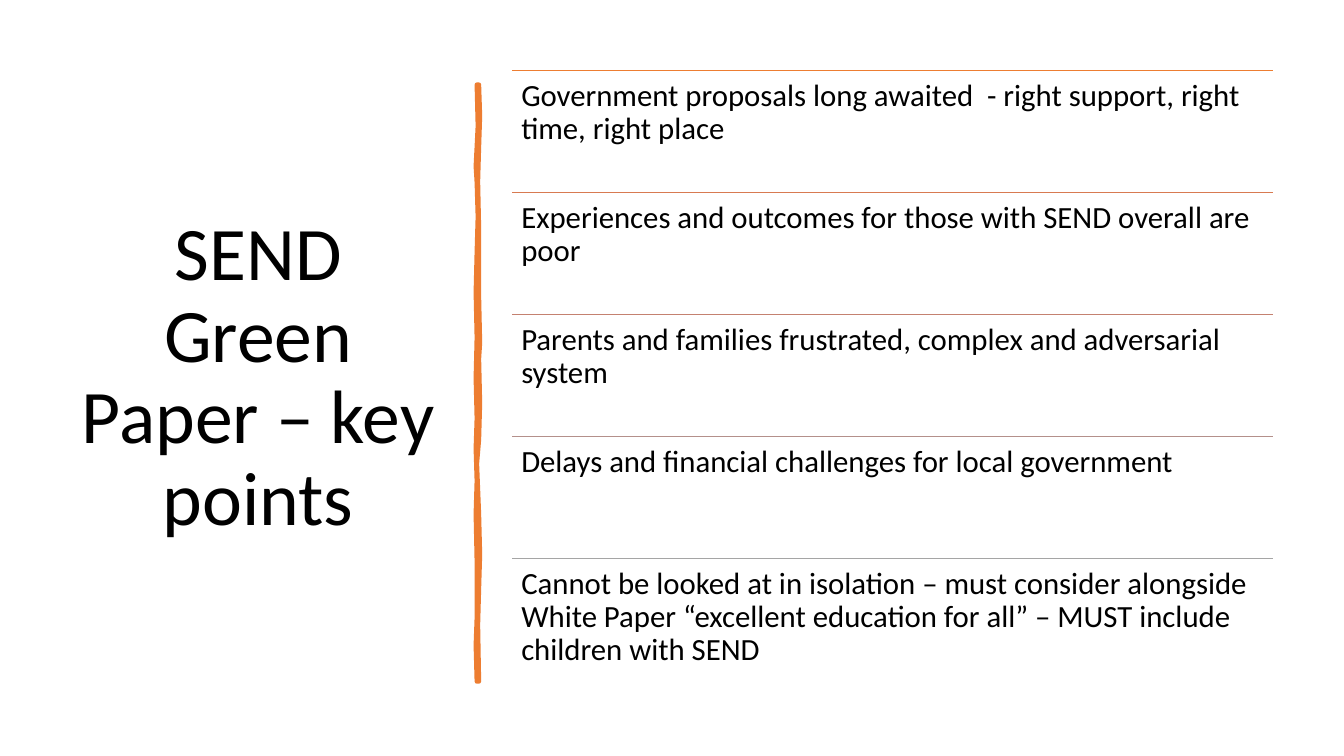
from lxml.etree import SubElement
from pptx import Presentation
from pptx.dml.color import RGBColor
from pptx.enum.shapes import MSO_CONNECTOR
from pptx.enum.text import MSO_ANCHOR, PP_ALIGN
from pptx.oxml.ns import qn
from pptx.util import Pt

PX = 9144  # EMU per px, 100 px to the inch
BLACK = RGBColor(0x00, 0x00, 0x00)
ORANGE = RGBColor(0xED, 0x7D, 0x31)
RUST = RGBColor(0xD8, 0x7A, 0x51)
CLAY = RGBColor(0xC4, 0x81, 0x70)
MAUVE = RGBColor(0xB4, 0x90, 0x8B)
GREY = RGBColor(0xA5, 0xA5, 0xA5)

POINTS = [
    (ORANGE, "Government proposals long awaited  - right support, right time, right place"),
    (RUST, "Experiences and outcomes for those with SEND overall are poor"),
    (CLAY, "Parents and families frustrated, complex and adversarial system"),
    (MAUVE, "Delays and financial challenges for local government"),
    (GREY, "Cannot be looked at in isolation – must consider alongside White Paper "
           "“excellent education for all” – MUST include children with SEND"),
]
LEFT, TOP, WIDTH, STEP = 508, 70, 755, 121

# Outline of the hand-drawn bar: down the right edge, up the left one
BAR = [
    (475, 84), (476, 115), (475, 146), (474, 180), (475, 226), (475, 294),
    (476, 340), (475, 356), (476, 400), (475, 436), (473, 460), (475, 510),
    (476, 550), (475, 584), (474, 620), (475, 676),
    (473, 676), (472, 640), (473, 613), (473, 557), (472, 510), (473, 477),
    (472, 445), (473, 415), (472, 375), (473, 335), (472, 290), (473, 250),
    (474, 215), (473, 181), (472, 165), (474, 125), (473, 84),
]


class Deck:
    def __init__(self, font, wide, high):
        self.font = font
        self.prs = Presentation()
        self.prs.slide_width, self.prs.slide_height = wide * PX, high * PX
        self.slide = self.prs.slides.add_slide(self.prs.slide_layouts[6])
        self.shapes = self.slide.shapes

    def text(self, words, x, y, w, h, size, inset,
             align=PP_ALIGN.LEFT, anchor=MSO_ANCHOR.TOP):
        box = self.shapes.add_textbox(x * PX, y * PX, w * PX, h * PX)
        frame = box.text_frame
        frame.word_wrap = True
        frame.vertical_anchor = anchor
        frame.margin_left = frame.margin_right = inset * PX
        frame.margin_top = frame.margin_bottom = inset * PX
        frame.text = words
        para = frame.paragraphs[0]
        para.alignment = align
        para.line_spacing = 0.9
        font = para.runs[0].font
        font.name, font.size = self.font, Pt(size)
        font.color.rgb = BLACK

    def rule(self, x, y, w, color):
        line = self.shapes.add_connector(
            MSO_CONNECTOR.STRAIGHT, x * PX, y * PX, (x + w) * PX, y * PX)
        line.line.color.rgb = color
        line.line.width = Pt(1)
        SubElement(line._element.spPr, qn("a:effectLst"))

    def outline(self, spots, color, width):
        pen = self.shapes.build_freeform(*spots[0], scale=PX)
        pen.add_line_segments(spots[1:], close=True)
        shape = pen.convert_to_shape()
        shape.shadow.inherit = False
        shape.fill.solid()
        shape.fill.fore_color.rgb = color
        shape.line.color.rgb = color
        shape.line.width = Pt(width)


def main():
    deck = Deck("Calibri", 1333, 750)
    deck.text("SEND Green Paper – key points", 69, 70, 374, 611, 54, 10,
              PP_ALIGN.CENTER, MSO_ANCHOR.MIDDLE)
    deck.outline(BAR, ORANGE, 3.25)
    for row, (color, words) in enumerate(POINTS):
        y = TOP + row * STEP
        deck.rule(LEFT, y, WIDTH, color)
        deck.text(words, LEFT, y, WIDTH, STEP, 22, 9)
    deck.prs.save("out.pptx")


if __name__ == "__main__":
    main()
